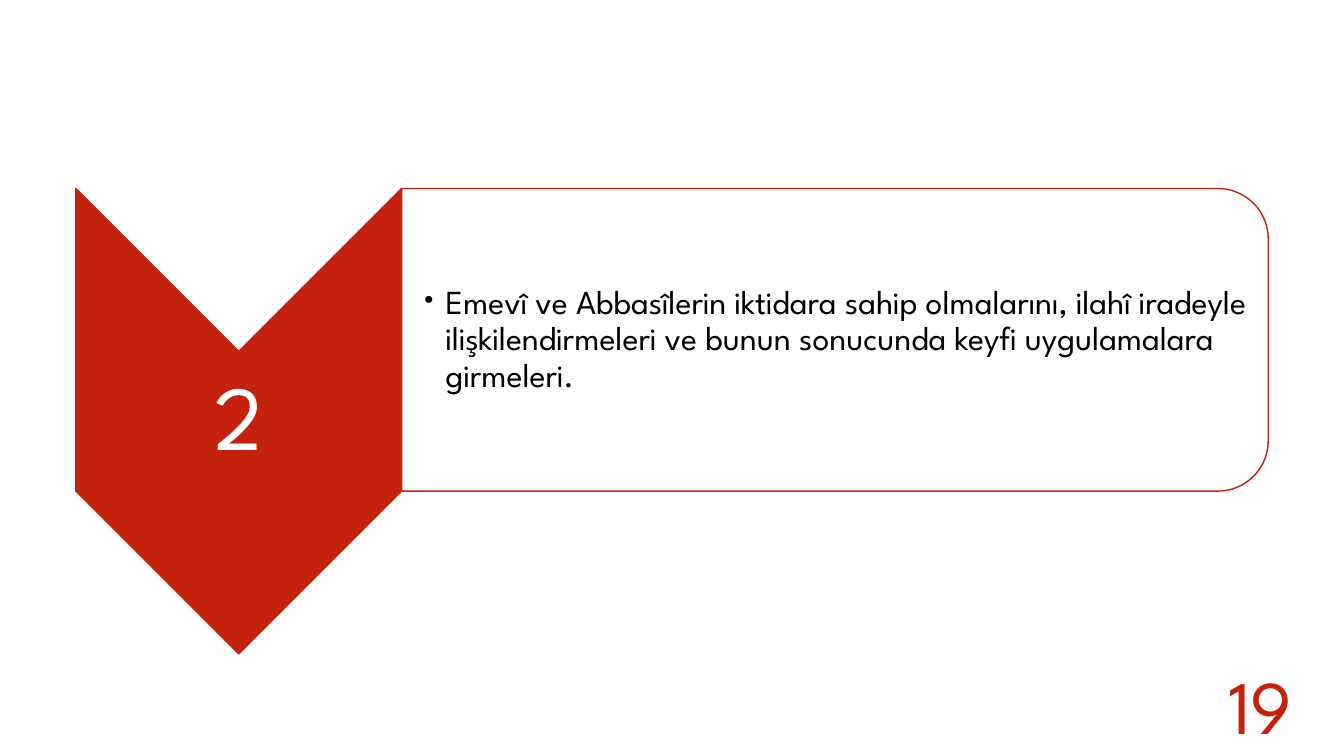
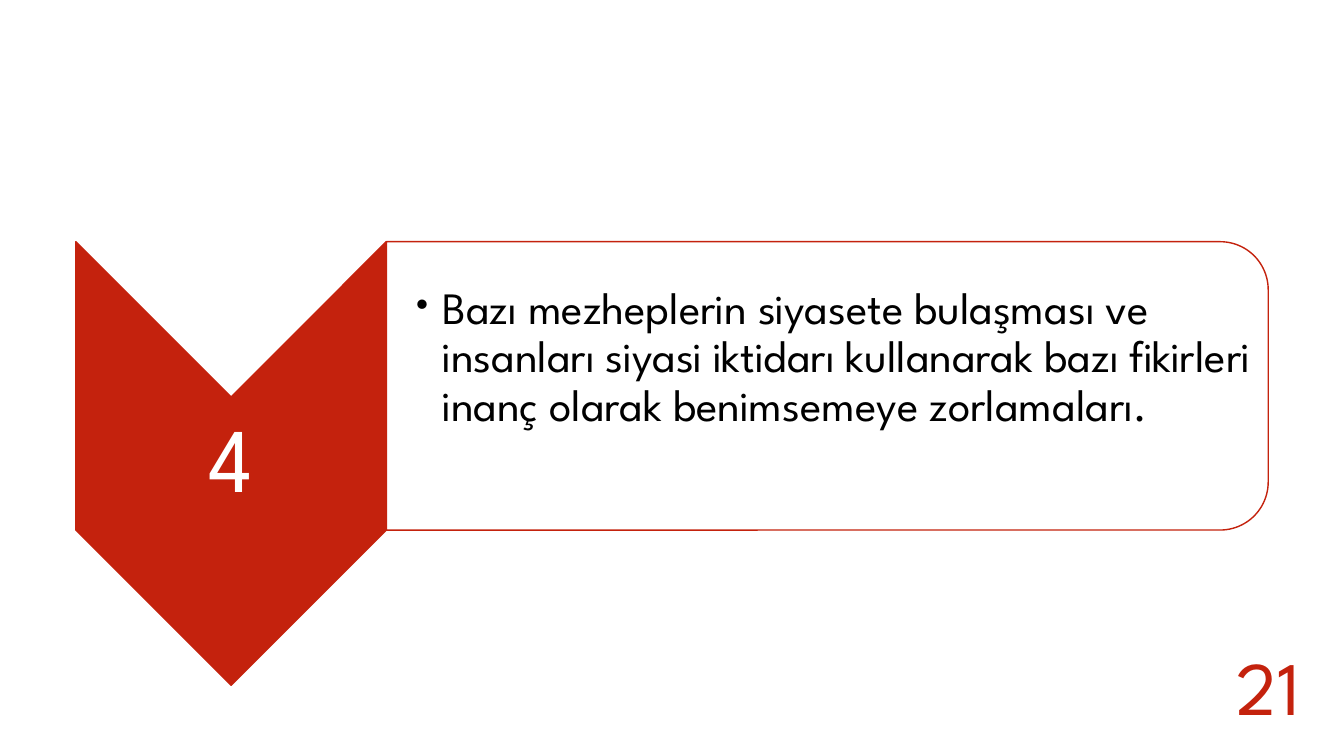
from dataclasses import dataclass

from lxml import etree
from pptx import Presentation
from pptx import util as u
from pptx.dml.color import RGBColor
from pptx.enum import lang, shapes, text
from pptx.oxml import ns


@dataclass(frozen=True)
class Theme:
    font: str = "League Spartan"
    red: RGBColor = RGBColor(0xC4, 0x22, 0x0D)
    white: RGBColor = RGBColor(0xFF, 0xFF, 0xFF)
    black: RGBColor = RGBColor(0, 0, 0)
    number_size: int = 65
    page_size: int = 54
    line_width: int = 1
    line_spacing: float = 0.9


@dataclass(frozen=True)
class Box:
    """A rectangle in centimetres."""
    left: float
    top: float
    width: float
    height: float

    def emu(self) -> tuple:
        return u.Cm(self.left), u.Cm(self.top), u.Cm(self.width), u.Cm(self.height)

    def before_quarter_turn(self) -> "Box":
        """The box that covers this one once it is turned by 90 degrees."""
        shift = (self.width - self.height) / 2
        return Box(self.left + shift, self.top - shift, self.height, self.width)


@dataclass(frozen=True)
class Reason:
    number: str
    statement: str
    statement_size: int
    indent: float
    inset_left: float
    inset_bottom: float
    top: float
    chevron_height: float
    page: str
    page_left: float
    page_top: float


THEME = Theme()
LEFT, RIGHT = 1.91, 31.96
CHEVRON_RATIO = 0.7
PANEL_RATIO = 0.65
PANEL_PADDING = 0.37
NUMBER_INSET = 0.13
STATEMENT_INSET = 0.05
PAGE_WIDTH, PAGE_HEIGHT = 2.64, 2.57

REASONS = [
    Reason("2", "Emevî ve Abbasîlerin iktidara sahip olmalarını, ilahî iradeyle "
           "ilişkilendirmeleri ve bunun sonucunda keyfi uygulamalara girmeleri.",
           24, 0.63, 0.48, 0.05, 4.75, 11.73, "19", 30.44, 16.48),
    Reason("4", "Bazı mezheplerin siyasete bulaşması ve insanları siyasi iktidarı "
           "kullanarak bazı fikirleri inanç olarak benimsemeye zorlamaları.",
           32, 0.79, 0.63, 1.45, 6.09, 11.18, "21", 30.65, 16),
]


def add_turned_shape(parent, kind: shapes.MSO_SHAPE, box: Box, fill: RGBColor) -> None:
    shape = parent.add_shape(kind, *box.before_quarter_turn().emu())
    shape.rotation = 90
    shape.shadow.inherit = False
    shape.fill.solid()
    shape.fill.fore_color.rgb = fill
    shape.line.color.rgb = THEME.red
    shape.line.width = u.Pt(THEME.line_width)


def set_insets(frame, left: float, top: float, right: float, bottom: float) -> None:
    frame.margin_left, frame.margin_top = u.Cm(left), u.Cm(top)
    frame.margin_right, frame.margin_bottom = u.Cm(right), u.Cm(bottom)


def add_bullet(paragraph, indent: float) -> None:
    properties = paragraph._p.get_or_add_pPr()
    properties.set("marL", str(u.Cm(indent)))
    properties.set("indent", str(-u.Cm(indent)))
    etree.SubElement(properties, ns.qn("a:buFont")).set("typeface", THEME.font)
    etree.SubElement(properties, ns.qn("a:buChar")).set("char", "•")


def add_text(parent, box: Box, words: str, size: int, color: RGBColor,
             indent: float = 0):
    """Add a text box, centred unless an indent asks for a bullet."""
    frame = parent.add_textbox(*box.emu()).text_frame
    frame.word_wrap = True
    paragraph = frame.paragraphs[0]
    paragraph.text = words
    if indent:
        add_bullet(paragraph, indent)
    else:
        paragraph.alignment = text.PP_ALIGN.CENTER
    paragraph.font.name = THEME.font
    paragraph.font.size = u.Pt(size)
    paragraph.font.color.rgb = color
    run = paragraph.runs[0]
    run.font.language_id = lang.MSO_LANGUAGE_ID.TURKISH
    run._r.get_or_add_rPr().set("kern", "1200")
    return frame


def add_reason(slide, reason: Reason) -> None:
    height = reason.chevron_height
    width = height * CHEVRON_RATIO
    chevron = Box(LEFT, reason.top, width, height)
    number = Box(LEFT, reason.top + width / 2, width, height - width)
    panel_left = LEFT + width
    panel = Box(panel_left, reason.top, RIGHT - panel_left, height * PANEL_RATIO)
    statement = Box(panel.left, panel.top + PANEL_PADDING,
                    panel.width - PANEL_PADDING, panel.height - 2 * PANEL_PADDING)

    group = slide.shapes.add_group_shape().shapes
    add_turned_shape(group, shapes.MSO_SHAPE.CHEVRON, chevron, THEME.red)
    number_frame = add_text(group, number, reason.number, THEME.number_size, THEME.white)
    set_insets(number_frame, *[NUMBER_INSET] * 4)
    add_turned_shape(group, shapes.MSO_SHAPE.ROUND_2_SAME_RECTANGLE, panel, THEME.white)
    statement_frame = add_text(group, statement, reason.statement,
                               reason.statement_size, THEME.black, reason.indent)
    set_insets(statement_frame, reason.inset_left, STATEMENT_INSET,
               STATEMENT_INSET, reason.inset_bottom)
    for frame in (number_frame, statement_frame):
        frame.vertical_anchor = text.MSO_ANCHOR.MIDDLE
        frame.paragraphs[0].line_spacing = THEME.line_spacing


def add_page_number(slide, reason: Reason) -> None:
    box = Box(reason.page_left, reason.page_top, PAGE_WIDTH, PAGE_HEIGHT)
    frame = add_text(slide.shapes, box, reason.page, THEME.page_size, THEME.red)
    frame.word_wrap = False
    frame.auto_size = text.MSO_AUTO_SIZE.SHAPE_TO_FIT_TEXT


def main() -> None:
    presentation = Presentation()
    presentation.slide_width, presentation.slide_height = u.Cm(33.87), u.Cm(19.05)
    blank = presentation.slide_layouts[6]
    for reason in REASONS:
        slide = presentation.slides.add_slide(blank)
        add_reason(slide, reason)
        add_page_number(slide, reason)
    presentation.save("out.pptx")


if __name__ == "__main__":
    main()
